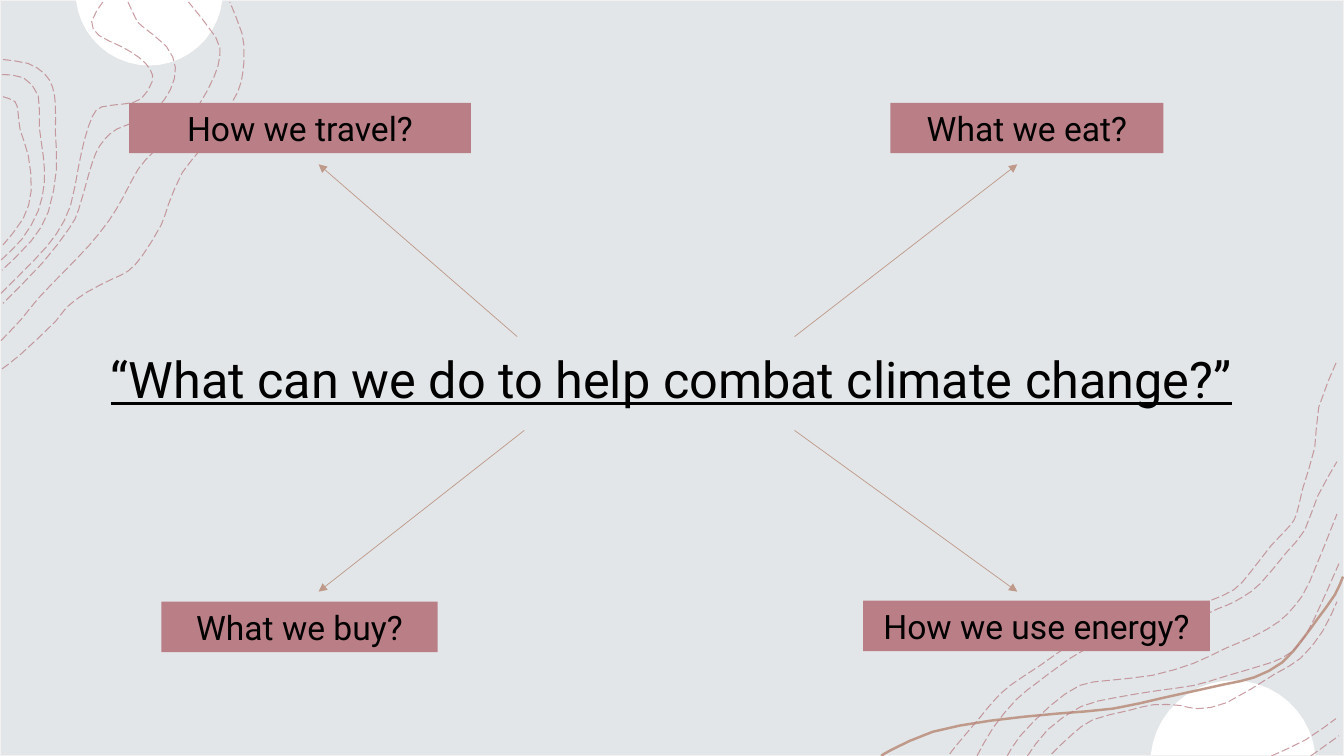
import math

from lxml import etree
from pptx import Presentation
from pptx import util as u
from pptx.dml.color import RGBColor
from pptx.enum import dml, shapes, text
from pptx.oxml.ns import qn

# Content: places are in inches
QUESTION = "“What can we do to help combat climate change?”"
QUESTION_BOX = (0.49, 3.03, 12.34, 1.45)
TOPICS = [  # wording, left, top, width
    ("How we travel?", 1.28, 1.02, 3.39),
    ("What we eat?", 8.83, 1.02, 2.71),
    ("How we use energy?", 8.56, 5.96, 3.44),
    ("What we buy?", 1.6, 5.97, 2.74),
]
TOPIC_HEIGHT = 0.5
ARROWS = [  # from, to
    ((5.13, 3.34), (3.16, 1.63)),
    ((7.88, 3.34), (10.09, 1.63)),
    ((5.2, 4.27), (3.16, 5.87)),
    ((7.88, 4.27), (10.09, 5.87)),
]

# Decoration: each curve runs smoothly through its points
DISCS = [  # centre x, centre y, radius, cut-off edge, side of the edge (1 below, -1 above)
    (1.48, -0.08, 0.73, 0, 1),
    (12.23, 7.57, 0.82, 7.49, -1),
]
RIBBON = [(13.32, 5.72), (13.24, 5.9), (13.06, 6.15), (12.92, 6.34), (12.72, 6.57),
          (12.44, 6.72), (12.14, 6.79), (11.55, 6.92), (11.04, 7.03), (10.48, 7.08),
          (9.82, 7.15), (9.25, 7.26), (8.84, 7.44), (8.74, 7.5)]
TOP_LEFT_CONTOURS = [
    [(0.02, 3.66), (0.2, 3.52), (0.55, 3.19), (0.66, 3.05), (0.86, 2.9), (1.11, 2.77),
     (1.27, 2.69), (1.41, 2.54), (1.6, 2.23), (1.67, 2.03), (1.81, 1.71), (2.01, 1.46),
     (2.19, 1.2), (2.36, 0.91), (2.41, 0.71), (2.42, 0.53), (2.4, 0.33), (2.28, 0.02)],
    [(0.01, 3.38), (0.21, 3.17), (0.38, 2.96), (0.64, 2.69), (0.88, 2.44), (1.08, 2.19),
     (1.22, 1.96), (1.37, 1.68), (1.54, 1.49), (1.83, 1.22), (1.98, 1.03), (2.12, 0.77),
     (2.18, 0.56), (2.14, 0.37), (1.87, 0.02)],
    [(1.27, 0.02), (1.35, 0.19), (1.41, 0.26), (1.65, 0.46), (1.74, 0.67), (1.69, 0.89),
     (1.55, 1.08), (1.36, 1.2), (1.16, 1.28), (1.04, 1.38), (0.95, 1.52), (0.88, 1.73),
     (0.78, 2.08), (0.69, 2.26), (0.42, 2.61), (0.03, 3.01)],
    [(0.01, 2.91), (0.35, 2.57), (0.56, 2.32), (0.7, 2.04), (0.78, 1.65), (0.84, 1.38),
     (0.92, 1.15), (1.01, 1.06), (1.24, 1.03), (1.4, 0.98), (1.51, 0.81), (1.49, 0.69),
     (1.38, 0.57), (1.2, 0.46), (0.98, 0.35), (0.91, 0.21), (1.02, 0.02)],
    [(0.03, 0.59), (0.28, 0.63), (0.44, 0.73), (0.52, 0.86), (0.55, 1.04), (0.55, 1.32),
     (0.56, 1.68), (0.48, 2.1), (0.31, 2.39), (0.02, 2.68)],
    [(0.02, 0.74), (0.23, 0.77), (0.38, 0.95), (0.39, 1.26), (0.43, 1.55), (0.44, 1.81),
     (0.38, 2.09), (0.22, 2.37), (0.01, 2.58)],
    [(0.03, 0.96), (0.15, 1.01), (0.18, 1.12), (0.2, 1.29), (0.28, 1.54), (0.31, 1.89),
     (0.23, 2.17), (0.03, 2.43)],
]
BOTTOM_RIGHT_CONTOURS = [
    [(9.42, 7.48), (9.49, 7.39), (9.71, 7.13), (9.86, 6.95), (10.02, 6.8), (10.32, 6.6),
     (10.56, 6.43), (10.78, 6.3), (10.98, 6.25), (11.13, 6.26), (11.37, 6.29), (11.55, 6.19),
     (11.73, 6.06), (12, 5.96), (12.24, 5.85), (12.4, 5.68), (12.61, 5.41), (12.79, 5.22),
     (12.86, 5.1), (12.92, 4.85), (13.04, 4.44), (13.08, 4.04), (13.26, 3.58)],
    [(9.69, 7.5), (9.85, 7.22), (10.08, 6.94), (10.29, 6.77), (10.49, 6.62), (10.75, 6.45),
     (11.03, 6.38), (11.22, 6.41), (11.45, 6.41), (11.64, 6.33), (11.95, 6.1), (12.18, 6),
     (12.33, 5.92), (12.5, 5.79), (12.76, 5.48), (12.94, 5.26), (13.07, 4.92), (13.26, 4.58)],
    [(13, 7.5), (13.28, 7.3)],
    [(12.61, 7.5), (12.95, 7.34), (13.25, 7.13)],
    [(10.43, 7.48), (10.63, 7.29), (10.84, 7.14), (11.19, 7.05), (11.45, 6.99), (11.71, 7),
     (11.88, 7.03), (12.17, 6.97), (12.64, 6.69), (12.9, 6.53), (13.12, 6.26), (13.26, 5.97)],
    [(10.19, 7.5), (10.39, 7.24), (10.72, 7.01), (11.07, 6.92), (11.49, 6.85), (11.84, 6.8),
     (12.15, 6.71), (12.52, 6.6), (12.71, 6.53), (12.88, 6.4), (13.03, 6.15), (13.28, 5.59)],
    [(9.99, 7.5), (10.12, 7.3), (10.42, 7), (10.71, 6.8), (11, 6.75), (11.43, 6.7),
     (11.84, 6.58), (12.16, 6.43), (12.44, 6.31), (12.68, 6.17), (12.85, 6), (12.99, 5.77),
     (13.26, 5.1)],
]

# Format
BLACK, WHITE = RGBColor(0, 0, 0), RGBColor(255, 255, 255)
MIST = RGBColor(0xE2, 0xE6, 0xE8)
EDGE = RGBColor(0xF2, 0xF2, 0xF2)
ROSE = RGBColor(0xBA, 0x7F, 0x86)
CLAY = RGBColor(0xBF, 0x99, 0x89)
QUESTION_FONT = {"name": "Roboto", "size": u.Pt(36), "underline": True, "bold": False}
TOPIC_FONT = {"name": "Roboto", "size": u.Pt(24)}
CURVE_STEPS = 2
ARC_STEPS = 20


def inches(*values):
    return [u.Cm(2.54 * value) for value in values]


def smooth(points):
    """Catmull-Rom curve through the points, as short straight steps."""
    ends = [points[0], *points, points[-1]]
    curve = [points[0]]
    for a, b, c, d in zip(ends, ends[1:], ends[2:], ends[3:]):
        for step in range(1, CURVE_STEPS + 1):
            t = step / CURVE_STEPS
            curve.append(tuple(
                q + t * ((r - p) + t * ((2 * p - 5 * q + 4 * r - s) + t * (3 * q - p - 3 * r + s))) / 2
                for p, q, r, s in zip(a, b, c, d)))
    return curve


def paint(shape, fill=None, line=None, width=1):
    shape.shadow.inherit = False
    for part, color in ((shape.fill, fill), (shape.line.fill, line)):
        if color is None:
            part.background()
        else:
            part.solid()
            part.fore_color.rgb = color
    if line is not None:
        shape.line.width = u.Pt(width)


def draw_outline(parent, points, close=False, **colors):
    places = [tuple(inches(*point)) for point in points]
    builder = parent.build_freeform(*places[0])
    builder.add_line_segments(places[1:], close=close)
    shape = builder.convert_to_shape()
    paint(shape, **colors)
    return shape


def write(frame, wording, font):
    frame.word_wrap = True
    paragraph = frame.paragraphs[0]
    paragraph.alignment = text.PP_ALIGN.CENTER
    run = paragraph.add_run()
    run.text = wording
    run.font.color.rgb = BLACK
    for name, value in font.items():
        setattr(run.font, name, value)


def add_discs(slide):
    for x, y, radius, edge, side in DISCS:
        start = math.asin((edge - y) * side / radius)
        sweep = math.pi - 2 * start
        angles = [start + sweep * step / ARC_STEPS for step in range(ARC_STEPS + 1)]
        arc = [(x + radius * math.cos(a), y + side * radius * math.sin(a)) for a in angles]
        draw_outline(slide.shapes, arc, close=True, fill=WHITE)


def add_contours(slide, contours):
    group = slide.shapes.add_group_shape()
    for points in contours:
        shape = draw_outline(group.shapes, smooth(points), line=ROSE, width=0.75)
        shape.line.dash_style = dml.MSO_LINE.LONG_DASH
        color = shape.element.spPr.find(qn("a:ln")).find(".//" + qn("a:srgbClr"))
        etree.SubElement(color, qn("a:alpha"), val="75000")


def main():
    presentation = Presentation()
    presentation.slide_width, presentation.slide_height = inches(13.33, 7.5)
    slide = presentation.slides.add_slide(presentation.slide_layouts[5])

    # Background and decoration
    background = slide.shapes.add_shape(shapes.MSO_SHAPE.RECTANGLE, *inches(0, 0, 13.33, 7.5))
    paint(background, fill=MIST, line=EDGE)
    add_discs(slide)
    draw_outline(slide.shapes, smooth(RIBBON), line=CLAY, width=1.75)
    add_contours(slide, TOP_LEFT_CONTOURS)
    add_contours(slide, BOTTOM_RIGHT_CONTOURS)

    # Question, in front of the decoration
    title = slide.shapes.title
    title.left, title.top, title.width, title.height = inches(*QUESTION_BOX)
    title.text_frame.vertical_anchor = text.MSO_ANCHOR.MIDDLE
    write(title.text_frame, QUESTION, QUESTION_FONT)
    slide.shapes.element.append(title.element)

    # Topics
    for wording, left, top, width in TOPICS:
        topic = slide.shapes.add_shape(
            shapes.MSO_SHAPE.RECTANGLE, *inches(left, top, width, TOPIC_HEIGHT))
        paint(topic, fill=ROSE)
        topic.text_frame.vertical_anchor = text.MSO_ANCHOR.TOP
        topic.text_frame.auto_size = text.MSO_AUTO_SIZE.SHAPE_TO_FIT_TEXT
        write(topic.text_frame, wording, TOPIC_FONT)

    # Arrows from the question to the topics
    for start, end in ARROWS:
        arrow = slide.shapes.add_connector(shapes.MSO_CONNECTOR.STRAIGHT, *inches(*start, *end))
        arrow.line.color.rgb = CLAY
        arrow.line.width = u.Pt(0.5)
        properties = arrow.element.spPr
        etree.SubElement(properties.find(qn("a:ln")), qn("a:tailEnd"), type="triangle")
        etree.SubElement(properties, qn("a:effectLst"))

    presentation.save("out.pptx")


if __name__ == "__main__":
    main()
